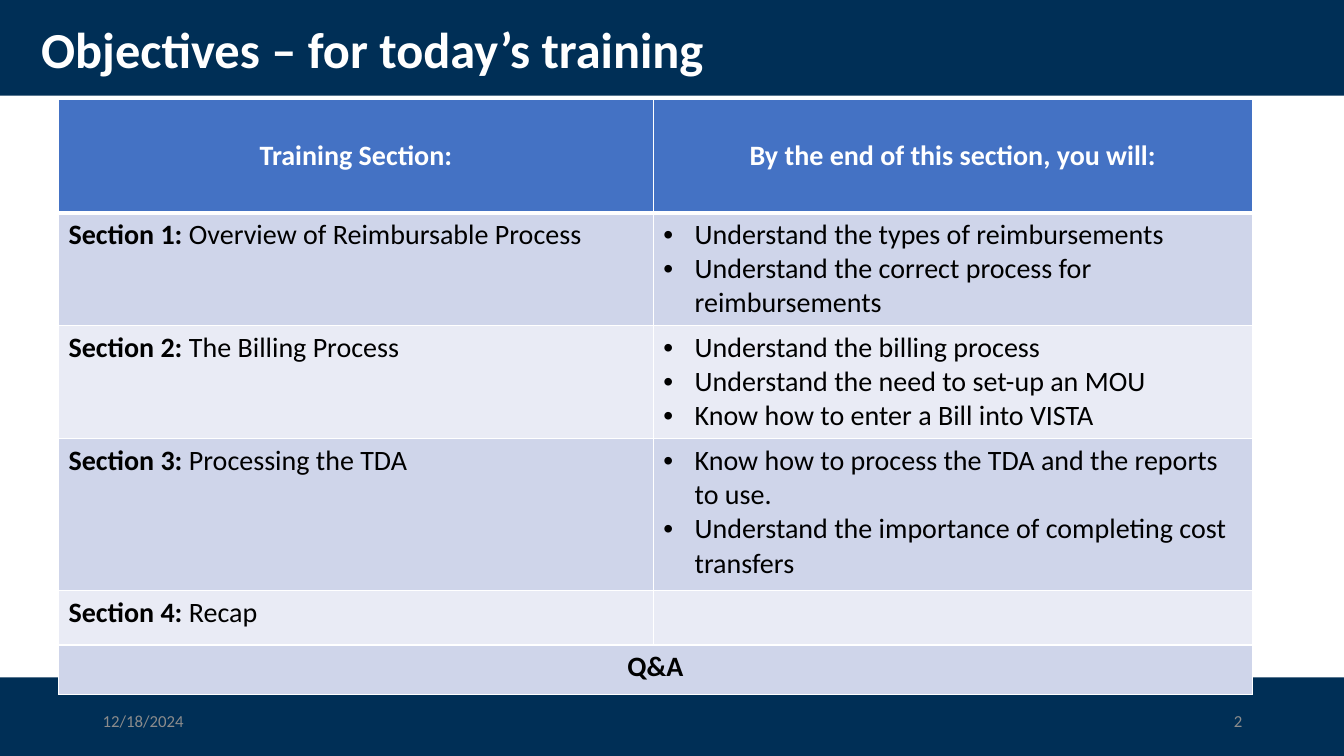
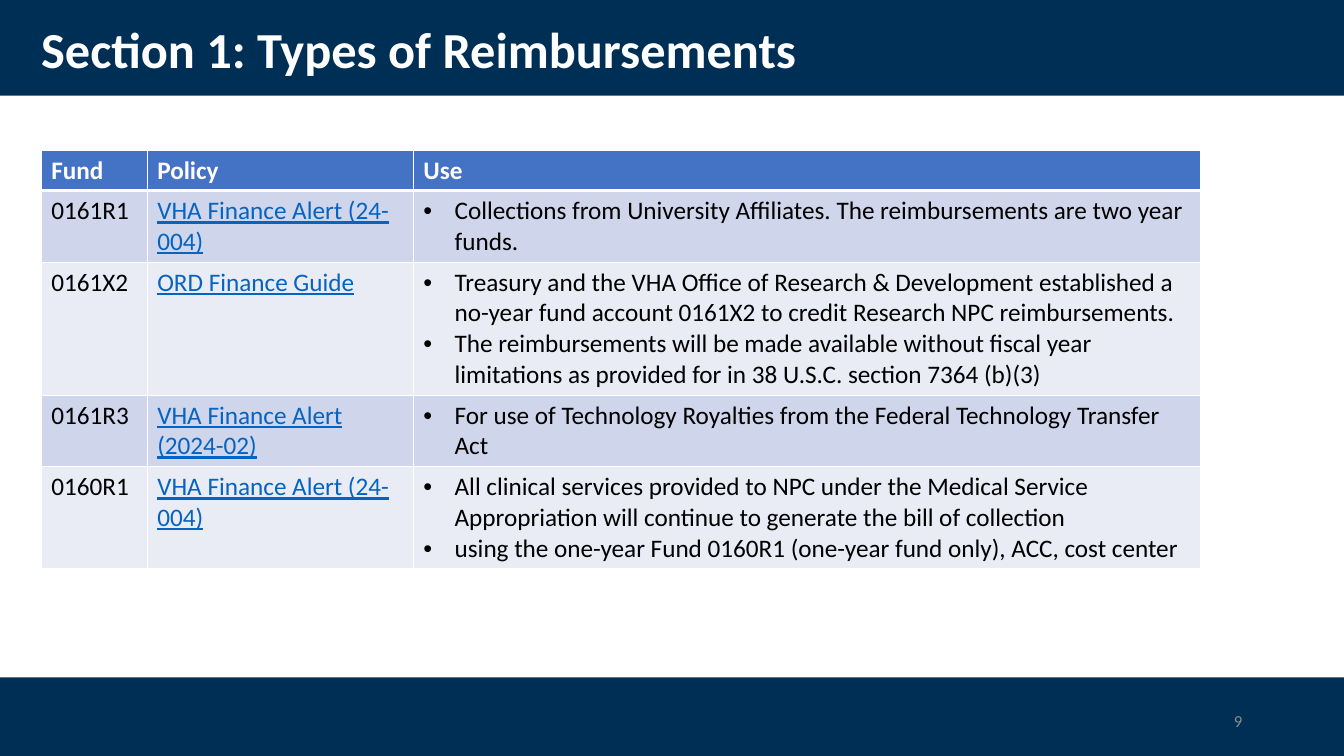
"""Build two training slides with banded tables."""
from dataclasses import dataclass

from lxml.etree import SubElement as Sub
from pptx import Presentation
from pptx.dml.color import RGBColor as Rgb
from pptx.enum.shapes import MSO_SHAPE as Shape
from pptx.enum.text import MSO_ANCHOR as Anchor, PP_ALIGN as Align
from pptx.oxml.ns import qn
from pptx.util import Inches, Pt


@dataclass(frozen=True)
class Theme:
    """Colours, font and type sizes for all slides."""
    font: str = "Calibri"
    navy: str = "002F56"
    blue: str = "4472C4"
    bands: tuple = ("CFD5EA", "E9EBF5")
    white: str = "FFFFFF"
    black: str = "000000"
    link: str = "0563C1"
    grey: str = "8C8C8C"
    title: int = 36
    large: int = 20
    text: int = 18
    foot: int = 12


T = Theme()
WIDE, HIGH = 13.33, 7.5


def plain(text):
    """Make one run in body style."""
    return text, T.black, False, False


def bold(text):
    """Make one bold run."""
    return text, T.black, True, False


def head(text):
    """Make one bold white run."""
    return text, T.white, True, False


def link(text):
    """Make one run that looks like a link."""
    return text, T.link, False, True


def note(text):
    """Make one grey footer run."""
    return text, T.grey, False, False


def bullet(para):
    """Give a paragraph a hanging round bullet."""
    props = para._p.get_or_add_pPr()
    props.set("marL", str(Inches(0.31)))
    props.set("indent", str(-Inches(0.31)))
    Sub(props, qn("a:buFont")).set("typeface", "Arial")
    Sub(props, qn("a:buChar")).set("char", "•")


def write(frame, paras, size, align=Align.LEFT, dots=False):
    """Fill a text frame with paragraphs, run by run."""
    for spot, runs in enumerate(paras):
        para = frame.add_paragraph() if spot else frame.paragraphs[0]
        para.alignment = align
        if dots:
            bullet(para)
        for text, color, strong, under in runs:
            run = para.add_run()
            run.text = text
            font = run.font
            font.name, font.size = T.font, Pt(size)
            font.bold, font.underline = strong, under
            font.color.rgb = Rgb.from_string(color)


def band(slide, top, height):
    """Draw a navy band across the slide."""
    bar = slide.shapes.add_shape(
        Shape.RECTANGLE, 0, Inches(top), Inches(WIDE), Inches(height))
    bar.shadow.inherit = False
    bar.fill.solid()
    bar.fill.fore_color.rgb = Rgb.from_string(T.navy)
    bar.line.fill.background()


def label(slide, box, run, size, align=Align.LEFT):
    """Place one line of text in a box and return its frame."""
    frame = slide.shapes.add_textbox(*map(Inches, box)).text_frame
    frame.word_wrap = True
    frame.vertical_anchor = Anchor.MIDDLE
    write(frame, [[run]], size, align)
    return frame


def paint(cell, row):
    """Set the borders and the fill of a cell."""
    props = cell._tc.get_or_add_tcPr()
    widths = {"L": 1, "R": 1, "T": 3 if row == 1 else 1,
              "B": 1 if row else 3}
    for side, width in widths.items():
        line = Sub(props, qn(f"a:ln{side}"))
        line.set("w", str(Pt(width)))
        fill = Sub(line, qn("a:solidFill"))
        Sub(fill, qn("a:srgbClr")).set("val", T.white)
    cell.fill.solid()
    color = T.bands[(row - 1) % 2] if row else T.blue
    cell.fill.fore_color.rgb = Rgb.from_string(color)


def grid(slide, spot, cols, highs, rows, size, align=Align.LEFT):
    """Place a table with a header, bands and a bulleted last column."""
    left, top = spot
    table = slide.shapes.add_table(
        len(rows), len(cols), Inches(left), Inches(top),
        Inches(sum(cols)), Inches(sum(highs))).table
    for col, width in zip(table.columns, cols):
        col.width = Inches(width)
    for r, (row, high) in enumerate(zip(rows, highs)):
        table.rows[r].height = Inches(high)
        for c in range(len(cols)):
            cell = table.cell(r, c)
            paint(cell, r)
            if c < len(row):
                if not r:
                    cell.vertical_anchor = Anchor.MIDDLE
                write(cell.text_frame, row[c], size,
                      Align.LEFT if r else align,
                      bool(r) and c == len(cols) - 1)
    return table


def base(deck, title, page, date=None):
    """Add a slide with bands, title and footer."""
    slide = deck.slides.add_slide(deck.slide_layouts[6])
    band(slide, 0, 0.95)
    band(slide, 6.72, HIGH - 6.72)
    frame = label(slide, (0.31, 0.18, 11.5, 0.68), head(title), T.title)
    frame.paragraphs[0].line_spacing = 0.9
    label(slide, (9.42, 6.95, 3, 0.4), note(page), T.foot, Align.RIGHT)
    if date:
        label(slide, (0.92, 6.95, 3, 0.4), note(date), T.foot)
    return slide


def goals(deck):
    """Build the slide of training goals."""
    slide = base(deck, "Objectives – for today’s training", "2", "12/18/2024")
    parts = [
        ("Overview of Reimbursable Process",
         ["Understand the types of reimbursements",
          "Understand the correct process for reimbursements"]),
        ("The Billing Process",
         ["Understand the billing process",
          "Understand the need to set-up an MOU",
          "Know how to enter a Bill into VISTA"]),
        ("Processing the TDA",
         ["Know how to process the TDA and the reports to use.",
          "Understand the importance of completing cost transfers"]),
        ("Recap", []),
    ]
    rows = [[[[head("Training Section:")]],
             [[head("By the end of this section, you will:")]]]]
    for count, (name, aims) in enumerate(parts, 1):
        rows.append([[[bold(f"Section {count}: "), plain(name)]],
                     [[plain(aim)] for aim in aims]])
    rows.append([])
    table = grid(slide, (0.58, 0.99), (5.9, 5.94),
                 (1.12, 1.12, 1.12, 1.51, 0.54, 0.49), rows, T.large,
                 Align.CENTER)
    last = table.cell(len(rows) - 1, 0)
    last.merge(table.cell(len(rows) - 1, 1))
    write(last.text_frame, [[bold("Q&A")]], T.large, Align.CENTER)


def funds(deck):
    """Build the slide of fund types."""
    slide = base(deck, "Section 1: Types of Reimbursements", "9")
    items = [
        ("0161R1", "VHA Finance Alert (24-004)",
         ["Collections from University Affiliates. The reimbursements are "
          "two year funds."]),
        ("0161X2", "ORD Finance Guide",
         ["Treasury and the VHA Office of Research & Development established "
          "a no-year fund account 0161X2 to credit Research NPC "
          "reimbursements.",
          "The reimbursements will be made available without fiscal year "
          "limitations as provided for in 38 U.S.C. section 7364 (b)(3)"]),
        ("0161R3", "VHA Finance Alert (2024-02)",
         ["For use of Technology Royalties from the Federal Technology "
          "Transfer Act"]),
        ("0160R1", "VHA Finance Alert (24-004)",
         ["All clinical services provided to NPC under the Medical Service "
          "Appropriation will continue to generate the bill of collection",
          "using the one-year Fund 0160R1 (one-year fund only), ACC, cost "
          "center"]),
    ]
    rows = [[[[head(name)]] for name in ("Fund", "Policy", "Use")]]
    for fund, rule, uses in items:
        rows.append([[[plain(fund)]], [[link(rule)]],
                     [[plain(use)] for use in uses]])
    grid(slide, (0.41, 1.49), (1.05, 2.64, 7.81),
         (0.4, 0.71, 1.32, 0.71, 1.01), rows, T.text)


def main():
    """Build and save the deck."""
    deck = Presentation()
    deck.slide_width, deck.slide_height = Inches(WIDE), Inches(HIGH)
    goals(deck)
    funds(deck)
    deck.save("out.pptx")


if __name__ == "__main__":
    main()
